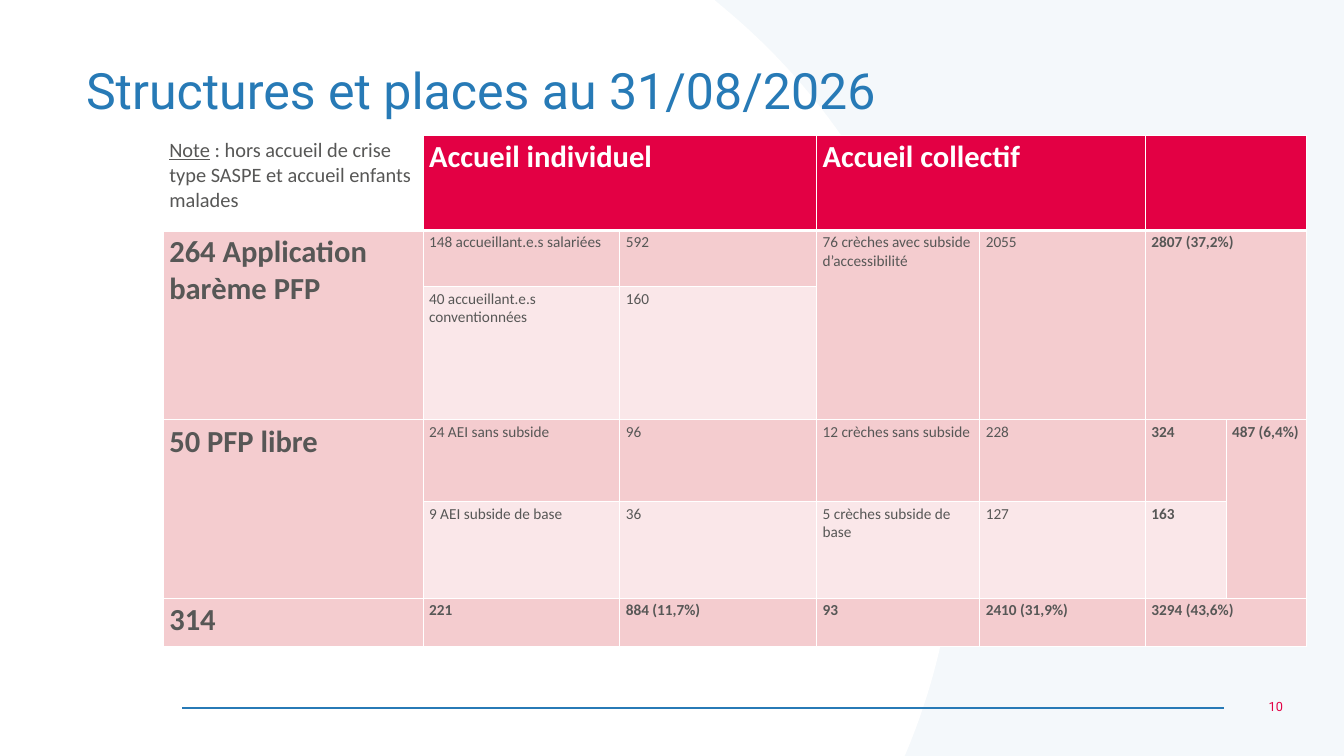
from lxml import etree
from pptx import Presentation
from pptx import util as u
from pptx.dml.color import RGBColor
from pptx.enum import shapes, text
from pptx.oxml.ns import qn

W, H = 21.99, 12.37
BLUE, RED, GREY, WHITE = "277AB6", "E30044", "575756", "FFFFFF"
PINK, PALE, TINT = "F4CCCF", "FAE7E9", "F4F8FB"

COLS = [4.25, 3.22, 3.22, 2.67, 2.71, 1.32, 1.32]
ROWS = [1.56, 0.92, 2.18, 1.34, 1.58, 0.78]
NOTE = " : hors accueil de crise type SASPE et accueil enfants malades"
CELLS = [
    ["Note", "Accueil individuel", "", "Accueil collectif", "", "", ""],
    ["264 Application barème PFP", "148 accueillant.e.s salariées", "592",
     "76 crèches avec subside d’accessibilité", "2055", "2807 (37,2%)", ""],
    ["", "40 accueillant.e.s conventionnées", "160", "", "", "", ""],
    ["50 PFP libre", "24 AEI sans subside", "96", "12 crèches sans subside", "228",
     "324", "487 (6,4%)"],
    ["", "9 AEI subside de base", "36", "5 crèches subside de base", "127", "163", ""],
    ["314", "221", "884 (11,7%)", "93", "2410 (31,9%)", "3294 (43,6%)", ""],
]
# First and last cell of each merged area, as (row, column)
MERGES = [((0, 1), (0, 2)), ((0, 3), (0, 4)), ((0, 5), (0, 6)),
          ((1, 0), (2, 0)), ((1, 3), (2, 3)), ((1, 4), (2, 4)), ((1, 5), (2, 6)),
          ((3, 0), (4, 0)), ((3, 6), (4, 6)), ((5, 5), (5, 6))]


def rgb(color):
    return RGBColor.from_string(color)


def add_run(p, words, size=18, color=GREY, font="Calibri", bold=False, underline=False):
    r = p.add_run()
    r.text = words
    r.font.size, r.font.name = u.Pt(size), font
    r.font.bold, r.font.underline = bold, underline
    r.font.color.rgb = rgb(color)


def add_label(s, box, words, align=text.PP_ALIGN.LEFT, spacing=1.0, **fmt):
    tf = s.shapes.add_textbox(*map(u.Inches, box)).text_frame
    tf.word_wrap = True
    tf.margin_top = tf.margin_bottom = 0
    tf.vertical_anchor = text.MSO_ANCHOR.MIDDLE
    p = tf.paragraphs[0]
    p.alignment, p.line_spacing = align, spacing
    add_run(p, words, **fmt)


def bezier(a, b, c, d, steps=40):
    for i in range(1, steps + 1):
        t = i / steps
        v = 1 - t
        yield tuple(v**3 * a[k] + 3 * v * v * t * b[k] + 3 * v * t * t * c[k] + t**3 * d[k]
                    for k in (0, 1))


def add_backdrop(s):
    """Tinted background with a white area ending in a round edge."""
    fill = s.background.fill
    fill.solid()
    fill.fore_color.rgb = rgb(TINT)
    start, side, top = (14.82, 12.33), (15.65, 8.23), (11.82, 0.11)
    points = [(14.8, H), start,
              *bezier(start, (15.35, 11.07), (15.65, 9.68), side),
              *bezier(side, (15.65, 4.96), (14.16, 2.04), top),
              (11.69, 0), (0, 0)]
    fb = s.shapes.build_freeform(0, u.Inches(H))
    fb.add_line_segments([(u.Inches(x), u.Inches(y)) for x, y in points], close=True)
    sp = fb.convert_to_shape()
    sp.shadow.inherit = False
    sp.fill.solid()
    sp.fill.fore_color.rgb = rgb(WHITE)
    sp.line.fill.background()


def add_footer(s, left, right, y):
    """Rule with the page number at its right."""
    line = s.shapes.add_connector(shapes.MSO_CONNECTOR.STRAIGHT,
                                  *map(u.Inches, (left, y, right, y)))
    line.line.color.rgb = rgb(BLUE)
    line.line.width = u.Pt(2)
    etree.SubElement(line._element.spPr, qn("a:effectLst"))
    add_label(s, (right, y - 0.21, 1.07, 0.35), "10", align=text.PP_ALIGN.RIGHT,
              size=15, color=RED, font="Roboto")


def add_borders(cell, header):
    tcPr = cell._tc.get_or_add_tcPr()
    for side in "LRTB":
        points = 3 if header and side == "B" else 1
        ln = etree.SubElement(tcPr, qn("a:ln" + side), w=str(u.Pt(points)))
        fill = etree.SubElement(ln, qn("a:solidFill"))
        etree.SubElement(fill, qn("a:srgbClr"), val=WHITE)


def cell_format(row, col):
    """Fill colour and text format of a cell, by its place in the table."""
    if row == 0:
        return RED, dict(size=36, color=WHITE, bold=True)
    if col == 0:
        return PINK, dict(size=36, bold=True)
    merged = row == 2 and col > 2 or row == 4 and col == 6
    fill = PALE if row in (2, 4) and not merged else PINK
    return fill, dict(bold=col >= 5 or row == 5)


def add_places_table(s, left, top):
    size = map(u.Inches, (left, top, sum(COLS), sum(ROWS)))
    table = s.shapes.add_table(len(ROWS), len(COLS), *size).table
    table.first_row = table.horz_banding = False
    for column, width in zip(table.columns, COLS):
        column.width = u.Inches(width)
    for i, height in enumerate(ROWS):
        table.rows[i].height = u.Inches(height)
        for j, words in enumerate(CELLS[i]):
            cell = table.cell(i, j)
            add_borders(cell, header=i == 0)
            p = cell.text_frame.paragraphs[0]
            if (i, j) == (0, 0):
                cell.fill.background()
                add_run(p, words, size=24, underline=True)
                add_run(p, NOTE, size=24)
                continue
            color, fmt = cell_format(i, j)
            cell.fill.solid()
            cell.fill.fore_color.rgb = rgb(color)
            if words:
                add_run(p, words, **fmt)
    for first, last in MERGES:
        table.cell(*first).merge(table.cell(*last))


def main():
    prs = Presentation()
    prs.slide_width, prs.slide_height = u.Inches(W), u.Inches(H)
    s = prs.slides.add_slide(prs.slide_layouts[6])
    add_backdrop(s)
    add_footer(s, 2.98, 20.02, 11.59)
    add_label(s, (1.31, 1.06, 16.06, 0.93), "Structures et places au 31/08/2026",
              spacing=0.9, size=59, color=BLUE, font="Roboto")
    add_places_table(s, 2.67, 2.21)
    prs.save("out.pptx")


if __name__ == "__main__":
    main()
